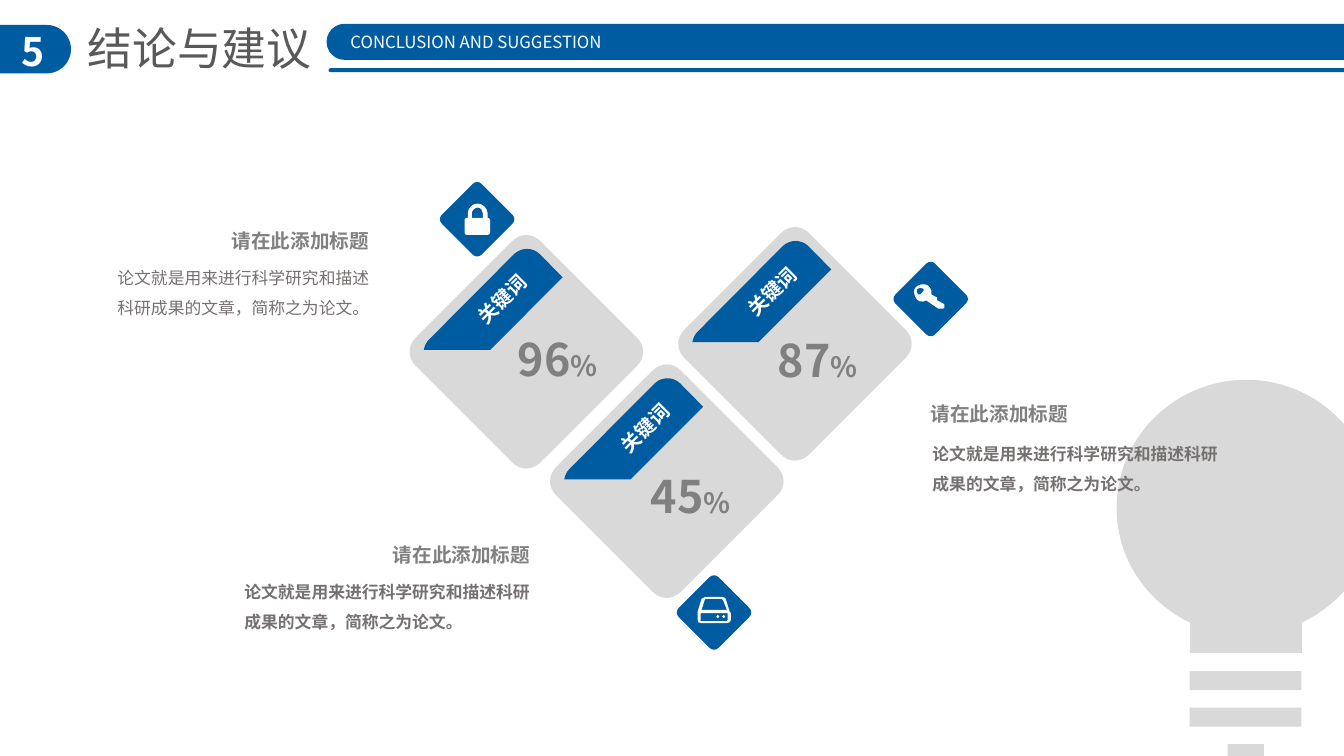
from lxml.etree import SubElement
from pptx import Presentation
from pptx.dml.color import RGBColor
from pptx.enum.shapes import MSO_SHAPE as Shape
from pptx.enum.text import MSO_ANCHOR as Anchor, MSO_AUTO_SIZE as Auto, PP_ALIGN as Align
from pptx.oxml.ns import qn
from pptx.util import Cm, Pt

FONT = "Noto Sans CJK SC"
BLUE = RGBColor(0x00, 0x5C, 0xA1)
PALE = RGBColor(0xD9, 0xD9, 0xD9)
WHITE = RGBColor(0xFF, 0xFF, 0xFF)
DARK = RGBColor(0x59, 0x59, 0x59)
GRAY = RGBColor(0x80, 0x80, 0x80)
BODY = RGBColor(0x76, 0x71, 0x71)

HEAD = "请在此添加标题"
NOTE = "论文就是用来进行科学研究和描述科研成果的文章，简称之为论文。"
WORD = "关键词"

CARDS = [
    ("96", (10.27, 5.87), (11.65, 7.11), (12.8, 8.23)),
    ("45", (13.81, 9.13), (15.27, 10.36), (16.15, 11.68)),
    ("87", (17.04, 5.67), (18.46, 6.91), (19.35, 8.25)),
]
NOTES = [
    ((5.59, 5.64), (2.71, 6.36, 7.11, 1.8), False),
    ((9.65, 13.56), (5.91, 14.27, 7.95, 1.7), True),
    ((23.2, 10.01), (23.25, 10.8, 7.95, 1.7), True),
]
BARS = [
    (Shape.RECTANGLE, (30.94, 18.75, 0.91, 0.48), PALE),
    (Shape.RECTANGLE, (29.98, 16.91, 2.82, 0.48), PALE),
    (Shape.RECTANGLE, (29.98, 17.83, 2.82, 0.48), PALE),
    (Shape.ROUNDED_RECTANGLE, (-0.7, 0.63, 2.49, 1.22), BLUE),
    (Shape.ROUNDED_RECTANGLE, (8.23, 0.6, 28.02, 0.91), BLUE),
    (Shape.ROUNDED_RECTANGLE, (8.28, 1.72, 28.02, 0.1), BLUE),
]

BULB = [[
    (6.53, 3.23), (6.53, 1.45, 5.05, 0, 3.28, 0), (1.47, 0, 0, 1.45, 0, 3.23),
    (0, 4.52, 0.76, 5.59, 1.85, 6.12), (1.85, 6.88), (4.67, 6.88), (4.67, 6.12),
    (5.77, 5.59, 6.53, 4.52, 6.53, 3.23),
]]
TAB = [[
    (3.33, 0.53), (3.15, 0.36, 2.87, 0.36, 2.69, 0.53), (0.56, 2.67),
    (0.48, 2.74, 0.43, 2.84, 0.41, 2.95), (2.08, 2.95), (3.91, 1.12),
]]
LOCK = [
    [(0.64, 0.74), (0.64, 0.76, 0.61, 0.79, 0.58, 0.79), (0.05, 0.79),
     (0.03, 0.79, 0, 0.76, 0, 0.74), (0, 0.41), (0, 0.38, 0.03, 0.36, 0.05, 0.36),
     (0.08, 0.36), (0.08, 0.25), (0.08, 0.13, 0.18, 0, 0.33, 0),
     (0.46, 0, 0.58, 0.13, 0.58, 0.25), (0.58, 0.36),
     (0.61, 0.36, 0.64, 0.38, 0.64, 0.41)],
    [(0.46, 0.36), (0.46, 0.25), (0.46, 0.18, 0.41, 0.1, 0.33, 0.1),
     (0.25, 0.1, 0.18, 0.18, 0.18, 0.25), (0.18, 0.36)],
]
KEY = [
    [(0.25, 0.13), (0.3, 0.15, 0.28, 0.18, 0.23, 0.23),
     (0.2, 0.28, 0.18, 0.3, 0.13, 0.28), (0.1, 0.25, 0.08, 0.2, 0.1, 0.15),
     (0.15, 0.1, 0.2, 0.1, 0.25, 0.13)],
    [(0.2, 0.03), (0.08, 0.05, 0, 0.15, 0.03, 0.25),
     (0.05, 0.38, 0.13, 0.48, 0.25, 0.46), (0.28, 0.46, 0.3, 0.43, 0.33, 0.43),
     (0.64, 0.64), (0.76, 0.64), (0.79, 0.61), (0.79, 0.53), (0.76, 0.51),
     (0.61, 0.43), (0.61, 0.36), (0.46, 0.28), (0.46, 0.23, 0.46, 0.2, 0.46, 0.18),
     (0.43, 0.05, 0.3, 0, 0.2, 0.03)],
]
DRIVE = [
    [(0.84, 0.58), (0.84, 0.64, 0.79, 0.66, 0.74, 0.66), (0.08, 0.66),
     (0.03, 0.66, 0, 0.64, 0, 0.58), (0, 0.41), (0, 0.38), (0.1, 0.05),
     (0.13, 0.03, 0.15, 0, 0.2, 0), (0.61, 0), (0.66, 0, 0.71, 0.03, 0.71, 0.05),
     (0.81, 0.38), (0.84, 0.41)],
    [(0.76, 0.41), (0.74, 0.41), (0.08, 0.41), (0.08, 0.58), (0.08, 0.61),
     (0.74, 0.61), (0.76, 0.58)],
    [(0.74, 0.33), (0.64, 0.08), (0.61, 0.05), (0.2, 0.05), (0.18, 0.08), (0.1, 0.33)],
] + [
    [(x - 0.04, 0.5), (x - 0.04, 0.44, x + 0.04, 0.44, x + 0.04, 0.5),
     (x + 0.04, 0.55, x - 0.04, 0.55, x - 0.04, 0.5)] for x in (0.51, 0.66)
]
BADGES = [
    ((11.07, 4.57), (11.71, 5.13), LOCK),
    ((22.5, 6.58), (23.01, 7.14), KEY),
    ((17.04, 14.48), (17.58, 15.04), DRIVE),
]


def paint(shape, color):
    shape.shadow.inherit = False
    shape.fill.solid()
    shape.fill.fore_color.rgb = color
    shape.line.fill.background()


def spread(steps):
    return [(s[i] * 1000, s[i + 1] * 1000) for s in steps for i in range(0, len(s), 2)]


def bend(shape, loops):
    nodes = iter(list(shape._element.iter(qn("a:lnTo"))))
    for step in (s for loop in loops for s in loop[1:]):
        group = [next(nodes) for _ in range(len(step) // 2)]
        if len(group) == 3:
            curve = SubElement(group[0].getparent(), qn("a:cubicBezTo"))
            group[0].addprevious(curve)
            for node in group:
                curve.append(node[0])
                node.getparent().remove(node)


def draw(shapes, at, loops, color):
    first, *rest = [spread(loop) for loop in loops]
    pen = shapes.build_freeform(*first[0], scale=Cm(1) / 1000)
    pen.add_line_segments(first[1:], close=True)
    for dots in rest:
        pen.move_to(*dots[0])
        pen.add_line_segments(dots[1:], close=True)
    shape = pen.convert_to_shape(Cm(at[0]), Cm(at[1]))
    bend(shape, loops)
    paint(shape, color)


def gem(size):
    half = size / 2
    turn = [(-0.12, -0.93), (-0.05, -1), (0.05, -1), (0.12, -0.93)]
    steps = []
    for _ in range(4):
        spots = [(half + half * x, half + half * y) for x, y in turn]
        steps += [spots[0], spots[1] + spots[2] + spots[3]]
        turn = [(-y, x) for x, y in turn]
    return [steps]


def style(para, size, color, bold=False):
    font = para.font
    font.name, font.size, font.bold = FONT, Pt(size), bold
    font.color.rgb = color
    SubElement(para._p.pPr.find(qn("a:defRPr")), qn("a:ea")).set("typeface", FONT)


def write(shapes, box, text, size, color, bold=False, wrap=False, align=Align.LEFT):
    area = shapes.add_textbox(*map(Cm, box))
    area.text_frame.word_wrap = wrap
    para = area.text_frame.paragraphs[0]
    para.add_run().text = text
    para.alignment = align
    style(para, size, color, bold)
    return area


def main():
    deck = Presentation()
    deck.slide_width, deck.slide_height = Cm(33.87), Cm(19.05)
    slide = deck.slides.add_slide(deck.slide_layouts[5])
    shapes = slide.shapes

    title = shapes.title
    title.left, title.top, title.width, title.height = map(Cm, (1.95, 0.39, 6.22, 1.63))
    frame = title.text_frame
    frame.text = "结论与建议"
    frame.word_wrap, frame.auto_size = False, Auto.NONE
    frame.vertical_anchor = Anchor.TOP
    frame.paragraphs[0].alignment = Align.LEFT
    style(frame.paragraphs[0], 32, DARK)

    for kind, box, color in BARS:
        bar = shapes.add_shape(kind, *map(Cm, box))
        paint(bar, color)
        if kind == Shape.ROUNDED_RECTANGLE:
            bar.adjustments[0] = 0.5
    draw(shapes, (28.14, 9.57), BULB, PALE)
    write(shapes, (0.18, 0.56, 1.3, 1.45), "5", 28, WHITE, True, True, Align.CENTER)
    write(shapes, (8.33, 0.68, 7.34, 0.76), "CONCLUSION AND SUGGESTION", 12, WHITE,
          align=Align.CENTER)

    for value, at, label, spot in CARDS:
        draw(shapes, at, gem(5.99), PALE)
        draw(shapes, at, TAB, BLUE)
        write(shapes, (*label, 2.01, 0.86), WORD, 14, WHITE, True).rotation = 315.2
        area = write(shapes, (*spot, 2.59, 1.63), value, 32, GRAY, True)
        sign = area.text_frame.paragraphs[0].add_run()
        sign.text = "%"
        sign.font.size = Pt(20)

    for at, spot, icon in BADGES:
        draw(shapes, at, gem(1.91), BLUE)
        draw(shapes, spot, icon, WHITE)

    for at, box, bold in NOTES:
        write(shapes, (*at, 4.01, 0.86), HEAD, 14, GRAY, True)
        area = write(shapes, box, NOTE, 12, BODY, bold, True)
        area.text_frame.paragraphs[0].line_spacing = 1.5

    deck.save("out.pptx")


if __name__ == "__main__":
    main()
